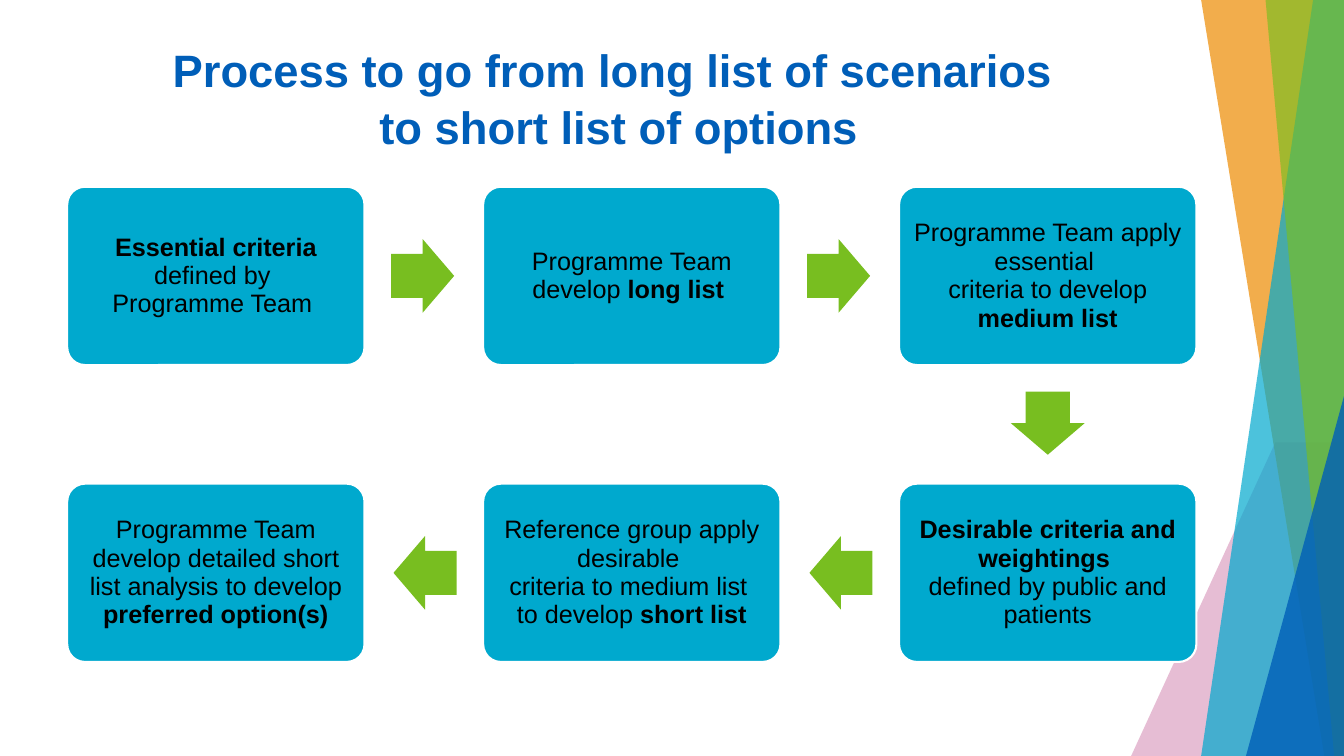
"""Build a slide showing the six steps from long list to short list."""
from pptx import Presentation
from pptx.dml.color import RGBColor
from pptx.enum import shapes, text
from pptx.oxml import ns
from pptx.util import Pt
from lxml import etree

INK = {
    "plum": "AE2573", "gold": "ED8B00", "cyan": "00A9CE", "green": "78BE20",
    "blue": "005EB8", "white": "FFFFFF", "black": "000000",
}
FONT = "Arial"
TITLE = "Process to go from long list of scenarios \vto short list of options"

# column, row, direction of the next arrow (x, y, turn), text runs (words, bold)
RIGHT, DOWN, LEFT = (1, 0, 0), (0, 1, 90), (-1, 0, 180)
STEPS = [
    (0, 0, RIGHT, [("Essential criteria ", True),
                   ("defined by \nProgramme Team ", False)]),
    (1, 0, RIGHT, [("Programme Team develop ", False), ("long list ", True)]),
    (2, 0, DOWN, [("Programme Team apply essential \ncriteria to develop ", False),
                  ("medium list", True)]),
    (2, 1, LEFT, [("Desirable criteria and weightings \n", True),
                  ("defined by public and patients", False)]),
    (1, 1, LEFT, [("Reference group apply desirable \ncriteria to medium list \n"
                   "to develop ", False), ("short list", True)]),
    (0, 1, None, [("Programme Team develop detailed short list analysis to develop ",
                   False), ("preferred option(s)", True)]),
]
WEDGES = [
    ("plum", 30, [(910.8, 316), (960, 316), (960, 540), (807.8, 540)]),
    ("gold", 70, [(858.2, 0), (960, 0), (960, 540), (946, 540)]),
    ("cyan", 70, [(938.2, 0), (960, 0), (960, 540), (858.2, 540)]),
    ("green", 65, [(903.6, 0), (960, 0), (960, 540), (953.3, 540)]),
]
X0, Y0, WIDE, HIGH, GAP = 48, 133.4, 212.4, 127.4, 84.7
LONG, THICK, SPACE = 45, 52.6, 19


def color(name):
    return RGBColor.from_string(INK[name])


def paint(shape, name, alpha=100):
    shape.shadow.inherit = False
    shape.line.fill.background()
    shape.fill.solid()
    shape.fill.fore_color.rgb = color(name)
    if alpha < 100:
        tint = shape.fill._xPr.find(".//" + ns.qn("a:srgbClr"))
        etree.SubElement(tint, ns.qn("a:alpha")).set("val", str(alpha * 1000))


def style(para, size, name, space):
    para.alignment = text.PP_ALIGN.CENTER
    para.line_spacing = space
    para.font.name = FONT
    para.font.size = Pt(size)
    para.font.color.rgb = color(name)


def add(slide, kind, x, y, w, h):
    return slide.shapes.add_shape(kind, Pt(x), Pt(y), Pt(w), Pt(h))


def add_wedges(slide):
    for name, alpha, points in WEDGES:
        pen = slide.shapes.build_freeform(*points[0], scale=Pt(1))
        pen.add_line_segments(points[1:], close=True)
        paint(pen.convert_to_shape(), name, alpha)
    corner = add(slide, shapes.MSO_SHAPE.ISOSCELES_TRIANGLE, 890, 283, 70, 257)
    corner.adjustments[0] = 1
    paint(corner, "blue", 80)


def add_step(slide, x, y, runs):
    box = add(slide, shapes.MSO_SHAPE.ROUNDED_RECTANGLE, x, y, WIDE, HIGH)
    box.adjustments[0] = 0.1
    paint(box, "cyan")
    box.line.color.rgb = color("white")
    box.line.width = Pt(1.5)
    frame = box.text_frame
    frame.word_wrap = True
    frame.vertical_anchor = text.MSO_ANCHOR.MIDDLE
    frame.margin_left = frame.margin_right = Pt(5)
    frame.margin_top = frame.margin_bottom = Pt(5)
    para = frame.paragraphs[0]
    style(para, 18, "black", 0.94)
    for words, bold in runs:
        for i, part in enumerate(words.split("\n")):
            if i:
                para.add_line_break()
            if part:
                run = para.add_run()
                run.text = part
                run.font.bold = bold


def add_arrow(slide, x, y, way):
    dx, dy, turn = way
    reach = SPACE + LONG / 2
    mid_x = x + WIDE / 2 + dx * (WIDE / 2 + reach)
    mid_y = y + HIGH / 2 + dy * (HIGH / 2 + reach)
    arrow = add(slide, shapes.MSO_SHAPE.RIGHT_ARROW,
                mid_x - LONG / 2, mid_y - THICK / 2, LONG, THICK)
    arrow.adjustments[0] = 0.6
    arrow.adjustments[1] = 0.5
    arrow.rotation = turn
    paint(arrow, "green")


def add_title(slide):
    title = slide.shapes.title
    title.left, title.top, title.width, title.height = Pt(53), Pt(25), Pt(778), Pt(88)
    frame = title.text_frame
    frame.text = TITLE
    frame.word_wrap = True
    frame.vertical_anchor = text.MSO_ANCHOR.MIDDLE
    para = frame.paragraphs[0]
    style(para, 32.4, "blue", 1.05)
    para.font.bold = True


def main():
    deck = Presentation()
    deck.slide_width, deck.slide_height = Pt(960), Pt(540)
    slide = deck.slides.add_slide(deck.slide_layouts[5])
    add_title(slide)
    add_wedges(slide)
    for col, row, way, runs in STEPS:
        x, y = X0 + col * (WIDE + GAP), Y0 + row * (HIGH + GAP)
        add_step(slide, x, y, runs)
        if way:
            add_arrow(slide, x, y, way)
    deck.save("out.pptx")


if __name__ == "__main__":
    main()
